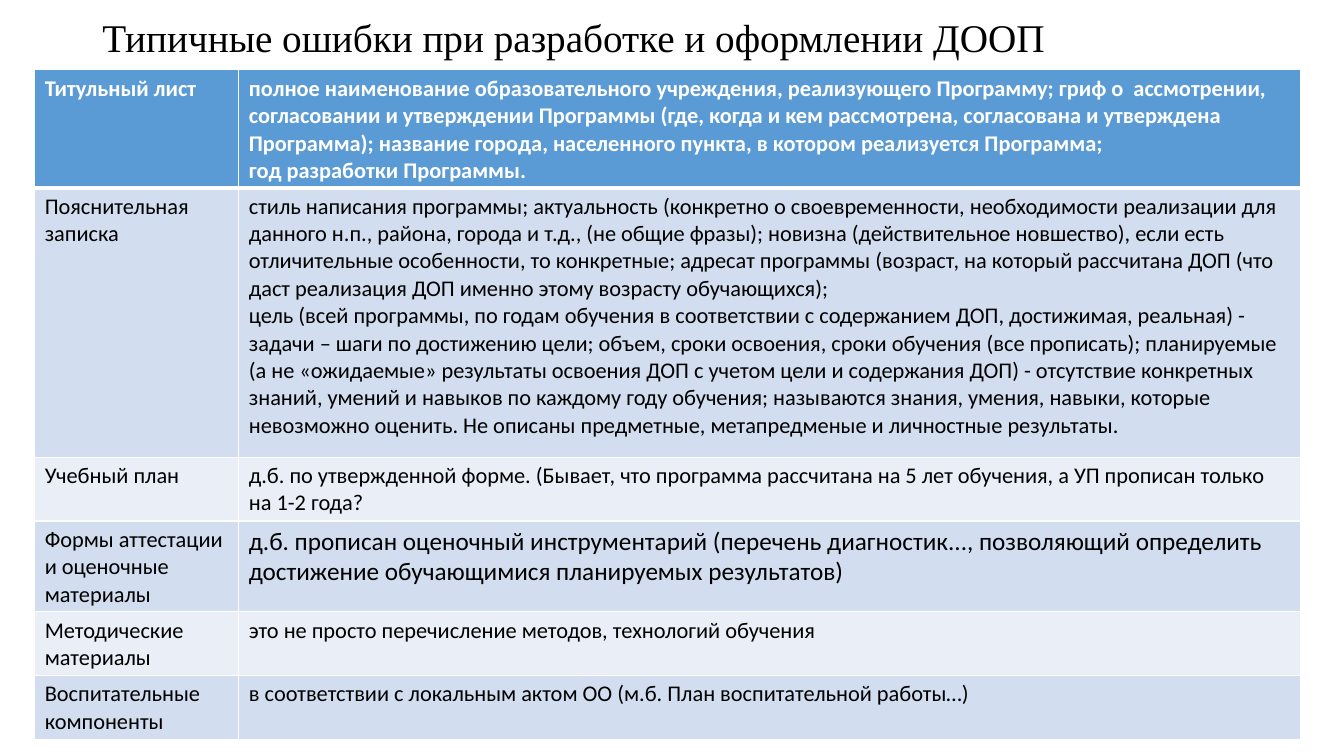
import pptx
import pptx.util
import pptx.dml.color
import pptx.enum.text
import pptx.oxml
import pptx.oxml.ns

Pt = pptx.util.Pt
COLORS = {"text": "000000", "header": "5B9BD5", "odd": "D2DEEF",
          "even": "EAEFF7", "white": "FFFFFF"}
TITLE = "Типичные ошибки при разработке и оформлении ДООП"
TITLE_FORMAT = {"name": "Times New Roman", "size": Pt(28), "bold": False}
HEADER_FORMAT = {"name": "Calibri", "size": Pt(16), "bold": True}
BODY_FORMAT = {"name": "Calibri", "size": Pt(16), "bold": False}
LARGE_FORMAT = {"name": "Calibri", "size": Pt(18), "bold": False}
COL_WIDTHS = [145.8, 758.6]

# Each row: height, section name, paragraphs about its mistakes, format of these
ROWS = [
    (84.3, "Титульный лист", [
        "полное наименование образовательного учреждения, реализующего Программу; "
        "гриф о  ассмотрении, согласовании и утверждении Программы (где, когда и кем "
        "рассмотрена, согласована и утверждена Программа); название города, населенного "
        "пункта, в котором реализуется Программа;",
        "год разработки Программы."], HEADER_FORMAT),
    (192.4, "Пояснительная записка", [
        "стиль написания программы; актуальность (конкретно о своевременности, "
        "необходимости реализации для данного н.п., района, города и т.д., (не общие "
        "фразы); новизна (действительное новшество), если есть отличительные особенности, "
        "то конкретные; адресат программы (возраст, на который рассчитана ДОП (что даст "
        "реализация ДОП именно этому возрасту обучающихся);",
        "цель (всей программы, по годам обучения в соответствии с содержанием ДОП, "
        "достижимая, реальная) - задачи – шаги по достижению цели; объем, сроки освоения, "
        "сроки обучения (все прописать); планируемые (а не «ожидаемые» результаты освоения "
        "ДОП с учетом цели и содержания ДОП) - отсутствие конкретных знаний, умений и "
        "навыков по каждому году обучения; называются знания, умения, навыки, которые "
        "невозможно оценить. Не описаны предметные, метапредменые и личностные "
        "результаты."], BODY_FORMAT),
    (37.4, "Учебный план", [
        "д.б. по утвержденной форме. (Бывает, что программа рассчитана на 5 лет обучения, "
        "а УП прописан только на 1-2 года?"], BODY_FORMAT),
    (41.8, "Формы аттестации и оценочные материалы", [
        "д.б. прописан оценочный инструментарий (перечень диагностик..., позволяющий "
        "определить достижение обучающимися планируемых результатов)"], LARGE_FORMAT),
    (34.6, "Методические материалы", [
        "это не просто перечисление методов, технологий обучения"], BODY_FORMAT),
    (34.6, "Воспитательные компоненты", [
        "в соответствии с локальным актом ОО (м.б. План воспитательной работы…)"],
     BODY_FORMAT),
]


def rgb(name):
    return pptx.dml.color.RGBColor.from_string(COLORS[name])


def write(tf, paragraphs, fmt, color):
    for i, text in enumerate(paragraphs):
        p = tf.paragraphs[0] if i == 0 else tf.add_paragraph()
        r = p.add_run()
        r.text = text
        for key, value in fmt.items():
            setattr(r.font, key, value)
        r.font.color.rgb = rgb(color)


def set_borders(cell, widths):
    tcPr = cell._tc.get_or_add_tcPr()
    for i, (side, width) in enumerate(widths.items()):
        ln = pptx.oxml.parse_xml(
            f'<a:ln{side} {pptx.oxml.ns.nsdecls("a")} w="{Pt(width)}"><a:solidFill>'
            f'<a:srgbClr val="{COLORS["white"]}"/></a:solidFill></a:ln{side}>')
        tcPr.insert(i, ln)


def add_title(s, left, top, width, height):
    tf = s.shapes.add_textbox(Pt(left), Pt(top), Pt(width), Pt(height)).text_frame
    tf.word_wrap = True
    tf.vertical_anchor = pptx.enum.text.MSO_ANCHOR.MIDDLE
    write(tf, [TITLE], TITLE_FORMAT, "text")
    tf.paragraphs[0].line_spacing = 0.9


def add_mistakes_table(s, left, top, width, height):
    table = s.shapes.add_table(len(ROWS), len(COL_WIDTHS), Pt(left), Pt(top),
                               Pt(width), Pt(height)).table
    for col, col_width in zip(table.columns, COL_WIDTHS):
        col.width = Pt(col_width)
    for i, (row_height, section, mistakes, fmt) in enumerate(ROWS):
        table.rows[i].height = Pt(row_height)
        fill = "header" if i == 0 else "odd" if i % 2 else "even"
        color = "white" if i == 0 else "text"
        section_format = HEADER_FORMAT if i == 0 else BODY_FORMAT
        # The header is set off by a thicker rule
        borders = {"L": 1, "R": 1, "T": 3 if i == 1 else 1, "B": 3 if i == 0 else 1}
        for j, (text, cell_format) in enumerate([([section], section_format),
                                                 (mistakes, fmt)]):
            cell = table.cell(i, j)
            cell.fill.solid()
            cell.fill.fore_color.rgb = rgb(fill)
            set_borders(cell, borders)
            write(cell.text_frame, text, cell_format, color)


def main():
    prs = pptx.Presentation()
    prs.slide_width, prs.slide_height = Pt(960), Pt(540)
    s = prs.slides.add_slide(prs.slide_layouts[6])
    # Heading
    add_title(s, 66, 7.2, 828, 41.8)
    # Programme sections and their typical mistakes
    add_mistakes_table(s, 24.8, 49.9, sum(COL_WIDTHS), sum(row[0] for row in ROWS))
    prs.save("out.pptx")


if __name__ == "__main__":
    main()
